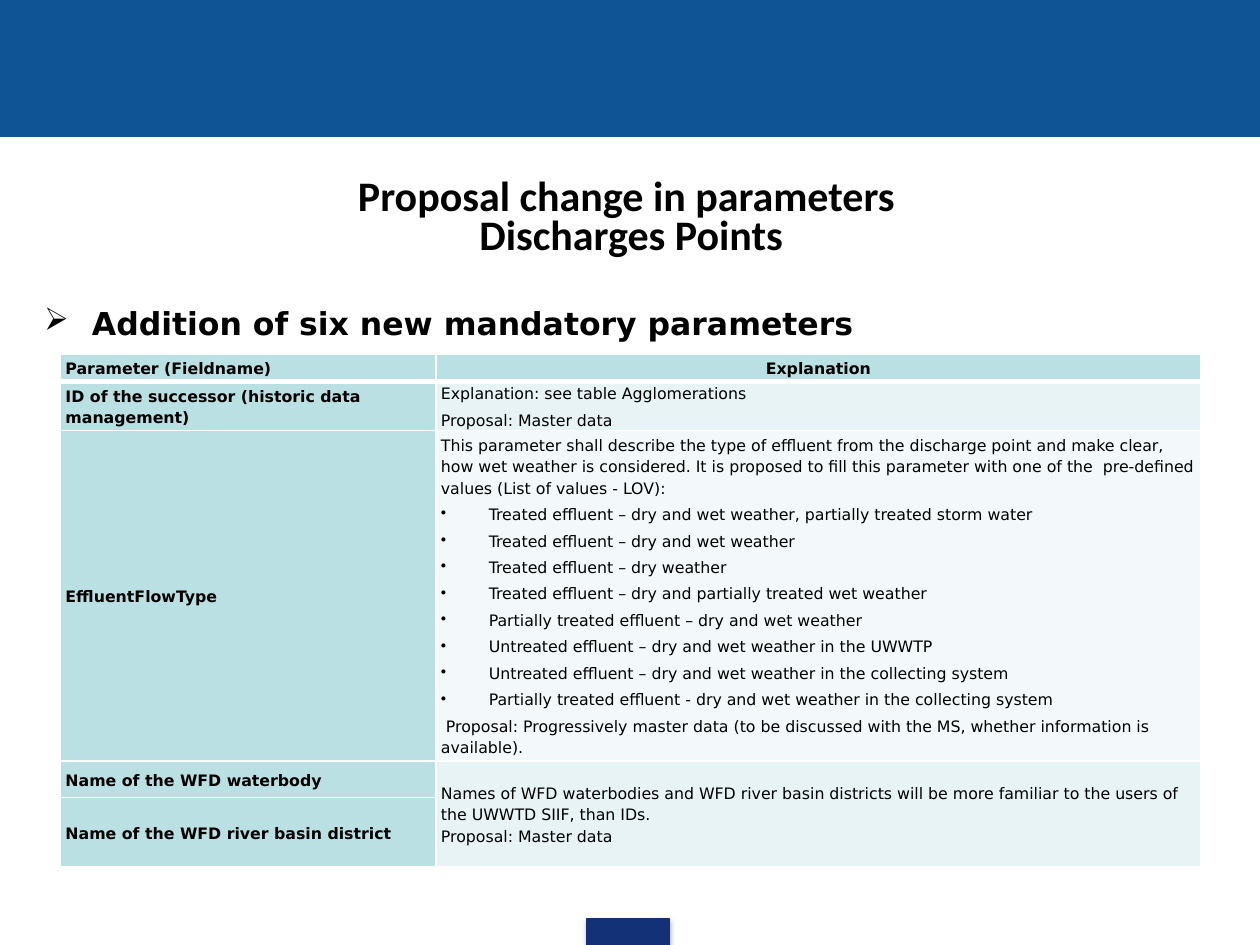
from dataclasses import dataclass

from lxml import etree
from pptx import Presentation
from pptx.dml.color import RGBColor
from pptx.enum.shapes import MSO_SHAPE
from pptx.enum.text import MSO_ANCHOR, PP_ALIGN
from pptx.oxml import parse_xml
from pptx.oxml.ns import nsdecls, qn
from pptx.util import Inches, Pt

RECTANGLE = MSO_SHAPE.RECTANGLE
MIDDLE, TOP = MSO_ANCHOR.MIDDLE, MSO_ANCHOR.TOP
LEFT, CENTER = PP_ALIGN.LEFT, PP_ALIGN.CENTER


@dataclass(frozen=True)
class Theme:
    banner: str = "0F5494"
    tab: str = "133176"
    label: str = "BBE0E3"
    row: str = "E7F3F4"
    alternate_row: str = "F3F9FA"
    border: str = "FFFFFF"
    text: str = "000000"
    title_font: str = "Calibri"
    body_font: str = "DejaVu Sans"
    title_size: float = 24
    heading_size: float = 18
    table_size: float = 9


class SlideBuilder:
    def __init__(self, slide, theme):
        self.slide = slide
        self.theme = theme

    def rectangle(self, left, top, width, height, color, shadow=False):
        shape = self.slide.shapes.add_shape(
            RECTANGLE, Inches(left), Inches(top), Inches(width), Inches(height))
        shape.shadow.inherit = False
        shape.fill.solid()
        shape.fill.fore_color.rgb = RGBColor.from_string(color)
        shape.line.color.rgb = RGBColor.from_string(color)
        shape.line.width = Pt(0.75)
        if shadow:
            effects = shape._element.spPr.find(qn("a:effectLst"))
            effects.append(parse_xml(
                f'<a:outerShdw {nsdecls("a")} blurRad="{Pt(3.1)}" dist="{Pt(1.8)}" '
                'dir="5400000" rotWithShape="0"><a:srgbClr val="000000">'
                '<a:alpha val="35000"/></a:srgbClr></a:outerShdw>'))

    def text_box(self, left, top, width, height):
        shape = self.slide.shapes.add_textbox(
            Inches(left), Inches(top), Inches(width), Inches(height))
        frame = shape.text_frame
        frame.word_wrap = True
        frame.vertical_anchor = TOP
        frame.margin_left = frame.margin_right = Inches(0.09)
        frame.margin_top = frame.margin_bottom = Inches(0.04)
        return frame

    def paragraph(self, frame, text, font, size, bold=False, align=LEFT,
                  spacing=1.0, before=0, after=0, indent=0, bullet=None):
        paragraph = frame.paragraphs[0]
        if paragraph.runs:
            paragraph = frame.add_paragraph()
        properties = paragraph._p.get_or_add_pPr()
        if indent:
            properties.set("marL", str(Inches(indent)))
            properties.set("indent", str(-Inches(indent)))
        if bullet:
            etree.SubElement(properties, qn("a:buChar")).set("char", bullet)
        paragraph.alignment = align
        paragraph.line_spacing = spacing
        paragraph.space_before = Pt(before)
        paragraph.space_after = Pt(after)
        run = paragraph.add_run()
        run.text = text
        run.font.name = font
        run.font.size = Pt(size)
        run.font.bold = bold
        run.font.color.rgb = RGBColor.from_string(self.theme.text)

    def table(self, left, top, columns, rows):
        shape = self.slide.shapes.add_table(
            len(rows), len(columns), Inches(left), Inches(top),
            Inches(sum(columns)), Inches(sum(rows)))
        table = shape.table
        table.first_row = table.horz_banding = False
        for column, width in zip(table.columns, columns):
            column.width = Inches(width)
        for row, height in zip(table.rows, rows):
            row.height = Inches(height)
        return table

    def cell(self, cell, color, lines, bold=False, align=LEFT, after=0,
             top_border=1, bottom_border=1):
        """Fill a cell; each line is a pair of text and bullet (or None)."""
        cell.vertical_anchor = MIDDLE
        cell.margin_left = cell.margin_right = Inches(0.04)
        cell.margin_top = cell.margin_bottom = 0
        cell.fill.solid()
        cell.fill.fore_color.rgb = RGBColor.from_string(color)
        borders = {"lnL": 1, "lnR": 1, "lnT": top_border, "lnB": bottom_border}
        for position, (side, width) in enumerate(borders.items()):
            cell._tc.get_or_add_tcPr().insert(position, parse_xml(
                f'<a:{side} {nsdecls("a")} w="{Pt(width)}"><a:solidFill>'
                f'<a:srgbClr val="{self.theme.border}"/></a:solidFill></a:{side}>'))
        for text, bullet in lines:
            self.paragraph(cell.text_frame, text, self.theme.body_font,
                           self.theme.table_size, bold, align, 1.15, after=after,
                           indent=0.38 if bullet else 0, bullet=bullet)


LABELS = [  # text, space after
    ("ID of the successor (historic data management)", 6),
    ("EffluentFlowType", 6),
    ("Name of the WFD waterbody", 0),
    ("Name of the WFD river basin district", 0),
]
SUCCESSOR = ["Explanation: see table Agglomerations", "Proposal: Master data"]
FLOW_INTRODUCTION = (
    "This parameter shall describe the type of effluent from the discharge point "
    "and make clear, how wet weather is considered. It is proposed to fill this "
    "parameter with one of the  pre-defined values (List of values - LOV):")
FLOW_TYPES = [
    "Treated effluent – dry and wet weather, partially treated storm water",
    "Treated effluent – dry and wet weather",
    "Treated effluent – dry weather",
    "Treated effluent – dry and partially treated wet weather",
    "Partially treated effluent – dry and wet weather",
    "Untreated effluent – dry and wet weather in the UWWTP",
    "Untreated effluent – dry and wet weather in the collecting system",
    "Partially treated effluent - dry and wet weather in the collecting system",
]
FLOW_PROPOSAL = (
    " Proposal: Progressively master data (to be discussed with the MS, "
    "whether information is available).")
WATERBODIES = [
    "Names of WFD waterbodies and WFD river basin districts will be more familiar "
    "to the users of the UWWTD SIIF, than IDs.",
    "Proposal: Master data",
]


def plain(texts):
    return [(text, None) for text in texts]


def main():
    theme = Theme()
    presentation = Presentation()
    presentation.slide_width, presentation.slide_height = Inches(10), Inches(7.5)
    slide = presentation.slides.add_slide(presentation.slide_layouts[6])
    builder = SlideBuilder(slide, theme)

    # Banner and bottom tab
    builder.rectangle(0, 0, 10, 1.08, theme.banner)
    builder.rectangle(4.66, 7.29, 0.65, 0.21, theme.tab, shadow=True)

    # Title and heading
    frame = builder.text_box(0.26, 1.39, 9.5, 0.71)
    for text in ("Proposal change in parameters ", "Discharges Points"):
        builder.paragraph(frame, text, theme.title_font, theme.title_size, True,
                          CENTER, 0.78, indent=0.27)
    builder.paragraph(frame, "Addition of six new mandatory parameters",
                      theme.body_font, theme.heading_size, True, LEFT, 0.78,
                      before=30.5, indent=0.38, bullet="➢")

    # Table header and parameter names
    table = builder.table(0.48, 2.81, [2.98, 6.07], [0.22, 0.34, 2.57, 0.29, 0.55])
    headers = [("Parameter (Fieldname)", LEFT), ("Explanation", CENTER)]
    for column, (text, align) in enumerate(headers):
        builder.cell(table.cell(0, column), theme.label, plain([text]), True, align,
                     bottom_border=3)
    for row, (text, after) in enumerate(LABELS, start=1):
        builder.cell(table.cell(row, 0), theme.label, plain([text]), True,
                     after=after, top_border=3 if row == 1 else 1)

    # Explanations
    table.cell(3, 1).merge(table.cell(4, 1))
    flow = (plain([FLOW_INTRODUCTION]) + [(text, "•") for text in FLOW_TYPES]
            + plain([FLOW_PROPOSAL]))
    builder.cell(table.cell(1, 1), theme.row, plain(SUCCESSOR), after=3, top_border=3)
    builder.cell(table.cell(2, 1), theme.alternate_row, flow, after=3)
    builder.cell(table.cell(3, 1), theme.row, plain(WATERBODIES))

    presentation.save("out.pptx")


if __name__ == "__main__":
    main()
